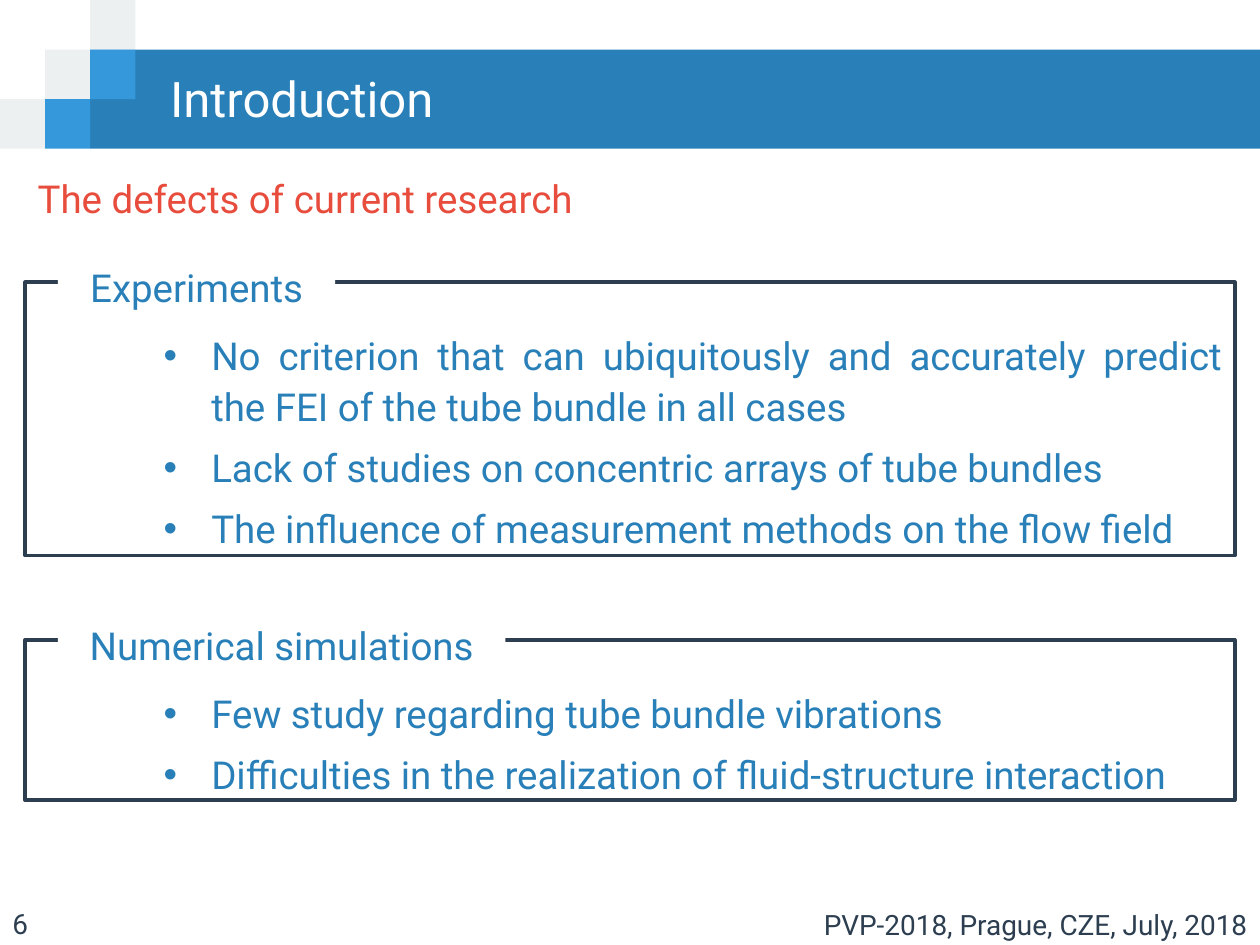
"""Builds the introduction slide listing the defects of current research."""
from lxml import etree
from pptx import Presentation
from pptx.dml.color import RGBColor
from pptx.enum import shapes, text
from pptx.oxml import ns
from pptx.util import Cm, Pt

OCEAN = RGBColor(0x29, 0x80, 0xB9)
SKY = RGBColor(0x34, 0x98, 0xDB)
CLOUD = RGBColor(0xEC, 0xF0, 0xF1)
NAVY = RGBColor(0x2C, 0x3E, 0x50)
RED = RGBColor(0xE7, 0x4C, 0x3C)
WHITE = RGBColor(0xFF, 0xFF, 0xFF)

LEFT, CENTER, RIGHT, JUSTIFY = (
    text.PP_ALIGN.LEFT, text.PP_ALIGN.CENTER, text.PP_ALIGN.RIGHT, text.PP_ALIGN.JUSTIFY)
TOP, MIDDLE = text.MSO_ANCHOR.TOP, text.MSO_ANCHOR.MIDDLE

TILE_W, TILE_H = 0.91, 1.0
TILES = [(0, 2, CLOUD), (1, 1, CLOUD), (2, 0, CLOUD), (2, 1, SKY), (1, 2, SKY)]
GROUPS = [
    ("Experiments", 5.69, 5.51, 5.11, 5.59, [
        "No criterion that can ubiquitously and accurately predict "
        "the FEI of the tube bundle in all cases",
        "Lack of studies on concentric arrays of tube bundles",
        "The influence of measurement methods on the flow field"]),
    ("Numerical simulations", 12.9, 3.23, 12.32, 9.02, [
        "Few study regarding tube bundle vibrations",
        "Difficulties in the realization of fluid-structure interaction"]),
]


class SlideBuilder:
    """Holds the text style and the slide being filled."""

    def __init__(self, slide, font="Roboto", size=22):
        self.slide, self.font, self.size = slide, font, size

    def box(self, left, top, width, height, fill=None, line=None):
        """Adds a flat rectangle."""
        rect = self.slide.shapes.add_shape(
            shapes.MSO_SHAPE.RECTANGLE, Cm(left), Cm(top), Cm(width), Cm(height))
        rect.shadow.inherit = False
        if fill is None:
            rect.fill.background()
        else:
            rect.fill.solid()
            rect.fill.fore_color.rgb = fill
        if line is None:
            rect.line.fill.background()
        else:
            rect.line.color.rgb = line
            rect.line.width = Pt(2.25)
        return rect

    def add_words(self, paragraph, words, color, size=None, align=LEFT):
        """Adds one styled run to a paragraph."""
        paragraph.alignment = align
        run = paragraph.add_run()
        run.text = words
        run.font.name = self.font
        run.font.size = Pt(size or self.size)
        run.font.color.rgb = color

    def label(self, words, left, top, width, height, color, size=None, align=LEFT, anchor=TOP):
        """Adds a one-line text box."""
        frame = self.slide.shapes.add_textbox(
            Cm(left), Cm(top), Cm(width), Cm(height)).text_frame
        frame.word_wrap = True
        frame.vertical_anchor = anchor
        self.add_words(frame.paragraphs[0], words, color, size, align)

    def bullets(self, frame, items):
        """Fills a frame with justified bullet points."""
        for number, item in enumerate(items):
            paragraph = frame.add_paragraph() if number else frame.paragraphs[0]
            properties = paragraph._p.get_or_add_pPr()
            properties.set("marL", str(Cm(3.5)))
            properties.set("indent", str(Cm(-0.96)))
            etree.SubElement(properties, ns.qn("a:buFont"), typeface="Arial")
            etree.SubElement(properties, ns.qn("a:buChar"), char="•")
            paragraph.line_spacing = 1.1
            paragraph.space_after = Pt(6)
            self.add_words(paragraph, item, OCEAN, align=JUSTIFY)

    def group(self, heading, top, height, heading_top, heading_width, items):
        """Adds a framed list whose heading interrupts the top edge."""
        frame = self.box(0.51, top, 24.38, height, line=NAVY).text_frame
        frame.word_wrap = True
        frame.vertical_anchor = TOP
        frame.margin_top = Cm(0.91)
        self.bullets(frame, items)
        caption = self.box(1.17, heading_top, heading_width, 1.22, fill=WHITE).text_frame
        caption.word_wrap = True
        caption.vertical_anchor = TOP
        caption.paragraphs[0].line_spacing = 1.1
        self.add_words(caption.paragraphs[0], heading, OCEAN, align=CENTER)


def main():
    """Creates and saves the deck."""
    deck = Presentation()
    deck.slide_width, deck.slide_height = Cm(25.4), Cm(19.05)
    builder = SlideBuilder(deck.slides.add_slide(deck.slide_layouts[6]))

    builder.box(2 * TILE_W, TILE_H, 25.4 - 2 * TILE_W, 2 * TILE_H, fill=OCEAN)
    for column, row, color in TILES:
        builder.box(column * TILE_W, row * TILE_H, TILE_W, TILE_H, fill=color)
    builder.label("Introduction", 3.18, 1.3, 20.52, 1.35, WHITE, 28, anchor=MIDDLE)
    builder.label("The defects of current research", 0.51, 3.4, 18.14, 1.19, RED)
    for group in GROUPS:
        builder.group(*group)
    builder.label("6", 0, 18.16, 5.92, 0.89, NAVY, 16)
    builder.label("PVP-2018, Prague, CZE, July, 2018", 11.63, 18.19, 13.77, 0.89,
                  NAVY, 16, RIGHT, MIDDLE)
    deck.save("out.pptx")


if __name__ == "__main__":
    main()
